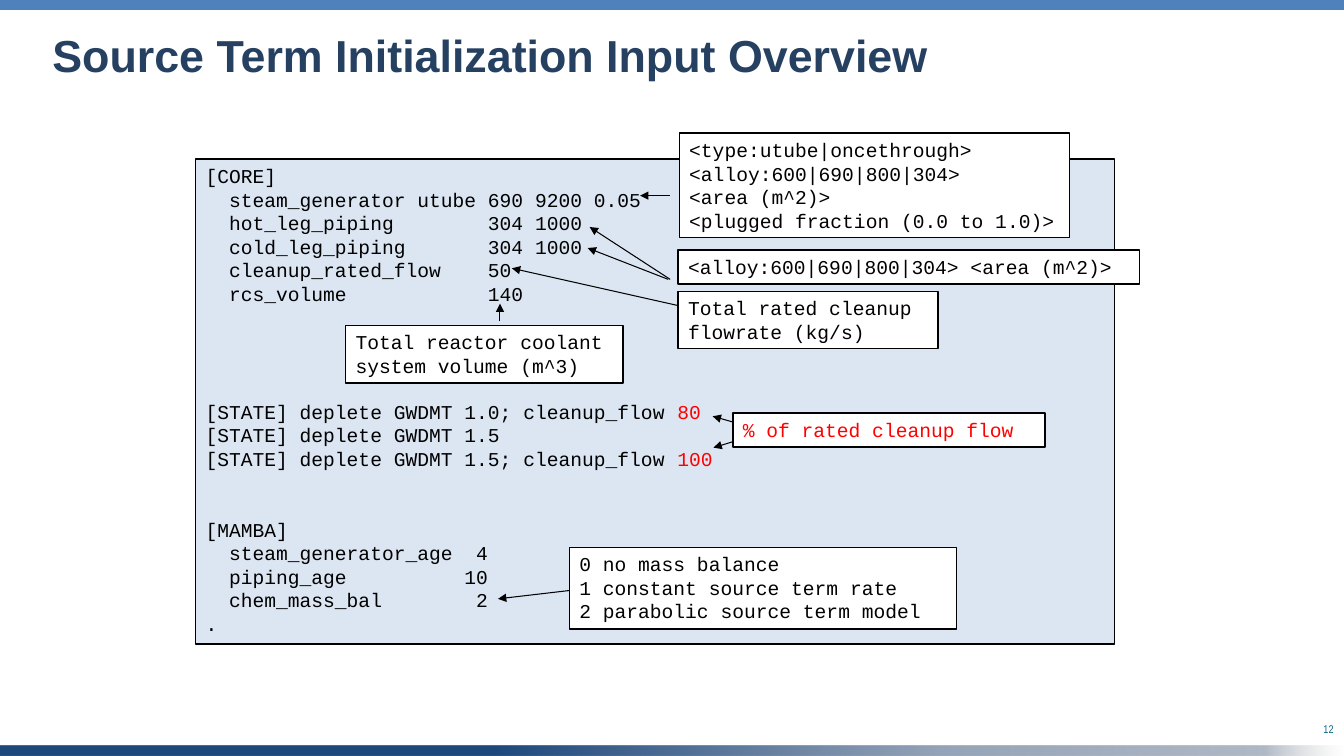
from lxml import etree
from pptx import Presentation
from pptx.dml.color import RGBColor
from pptx.enum.shapes import MSO_CONNECTOR, MSO_SHAPE
from pptx.enum.text import MSO_ANCHOR, PP_ALIGN
from pptx.oxml import parse_xml
from pptx.oxml.ns import nsdecls, qn
from pptx.util import Cm, Pt

RECTANGLE = MSO_SHAPE.RECTANGLE
STRAIGHT = MSO_CONNECTOR.STRAIGHT
TOP = MSO_ANCHOR.TOP
LEFT, RIGHT = PP_ALIGN.LEFT, PP_ALIGN.RIGHT

COLORS = {
    "black": "000000", "white": "FFFFFF", "red": "FF0000",
    "panel": "DCE6F2", "title": "254061", "number": "096582",
    "bar": "4F81BD",
}
FOOTER_STOPS = [(37, "1F497D", 100), (70, "95A4B8", 100),
                (94, "B0B9C6", 100), (100, "DBDBDB", 0)]
SLIDE_WIDTH, SLIDE_HEIGHT, BAR_HEIGHT = 33.87, 19.05, 0.25

INPUT_LINES = [
    ("[CORE]", "", 0),
    ("  steam_generator utube 690 9200 0.05", "", 0),
    ("  hot_leg_piping        304 1000", "", 0),
    ("  cold_leg_piping       304 1000", "", 0),
    ("  cleanup_rated_flow    50", "", 0),
    ("  rcs_volume            140", "", 0),
    ("[STATE] deplete GWDMT 1.0; cleanup_flow ", "80", 67.4),
    ("[STATE] deplete GWDMT 1.5", "", 0),
    ("[STATE] deplete GWDMT 1.5; cleanup_flow ", "100", 0),
    ("[MAMBA]", "", 33.7),
    ("  steam_generator_age  4", "", 0),
    ("  piping_age          10", "", 0),
    ("  chem_mass_bal        2", "", 0),
    (".", "", 0),
]
CALLOUTS = [
    ((17.12, 3.35, 9.83, 2.64), "black",
     ["<type:utube|oncethrough> <alloy:600|690|800|304>",
      "<area (m^2)>", "<plugged fraction (0.0 to 1.0)>"]),
    ((17.09, 6.3, 11.63, 0.86), "black",
     ["<alloy:600|690|800|304> <area (m^2)>"]),
    ((18.47, 10.41, 7.87, 0.86), "red", ["% of rated cleanup flow"]),
    ((17.09, 7.34, 6.55, 1.45), "black",
     ["Total rated cleanup flowrate (kg/s)"]),
    ((14.35, 13.79, 9.75, 2.06), "black",
     ["0 no mass balance", "1 constant source term rate",
      "2 parabolic source term model"]),
    ((8.71, 8.2, 6.99, 1.45), "black",
     ["Total reactor coolant system volume (m^3)"]),
]
ARROWS = [
    (16.89, 4.93, 16.13, 4.93), (16.89, 7.04, 14.86, 5.72),
    (17.09, 7.7, 12.9, 6.76), (18.49, 10.64, 17.96, 10.49),
    (18.47, 11.13, 17.98, 11.28), (16.84, 7.04, 14.81, 6.25),
    (14.35, 14.88, 12.55, 15.09), (12.6, 8.1, 12.6, 7.65),
]


def color(name):
    return RGBColor.from_string(COLORS[name])


def style_font(font, name, size, tint, bold=False):
    font.name, font.size, font.bold = name, Pt(size), bold
    font.color.rgb = color(tint)


def add_rectangle(page, area, fill, outline=None):
    box = page.shapes.add_shape(RECTANGLE, *map(Cm, area))
    box.shadow.inherit = False
    box.fill.solid()
    box.fill.fore_color.rgb = color(fill)
    if outline:
        box.line.color.rgb = color(outline)
        box.line.width = Pt(1)
    else:
        box.line.fill.background()
    return box


def add_footer_bar(page):
    bar = add_rectangle(
        page, (0, SLIDE_HEIGHT - BAR_HEIGHT, SLIDE_WIDTH, BAR_HEIGHT), "bar")
    stops = "".join(
        f'<a:gs pos="{position * 1000}"><a:srgbClr val="{tint}">'
        f'<a:alpha val="{opacity * 1000}"/></a:srgbClr></a:gs>'
        for position, tint, opacity in FOOTER_STOPS)
    gradient = parse_xml(
        f'<a:gradFill {nsdecls("a")} rotWithShape="1"><a:gsLst>{stops}'
        '</a:gsLst><a:lin ang="0" scaled="0"/></a:gradFill>')
    properties = bar.fill._xPr
    properties.replace(properties.find(qn("a:solidFill")), gradient)


def add_code_box(page, area, fill, lines, tint="black"):
    box = add_rectangle(page, area, fill, "black")
    frame = box.text_frame
    frame.word_wrap = True
    frame.vertical_anchor = TOP
    for index, (text, highlight, gap) in enumerate(lines):
        para = frame.add_paragraph() if index else frame.paragraphs[0]
        para.alignment = LEFT
        if gap:
            para.space_before = Pt(gap)
        style_font(para.font, "Courier New", 14, tint)
        para.add_run().text = text
        if highlight:
            span = para.add_run()
            span.text = highlight
            span.font.color.rgb = color("red")


def add_label(page, area, text, font, alignment, spacing=1.0, inset=0.13):
    box = page.shapes.add_textbox(*map(Cm, area))
    frame = box.text_frame
    frame.word_wrap = True
    frame.margin_top = frame.margin_bottom = Cm(inset)
    para = frame.paragraphs[0]
    para.text = text
    para.alignment = alignment
    para.line_spacing = spacing
    style_font(para.font, *font)


def add_arrow(page, ends):
    arrow = page.shapes.add_connector(STRAIGHT, *map(Cm, ends))
    arrow.line.color.rgb = color("black")
    arrow.line.width = Pt(0.75)
    etree.SubElement(arrow.line._get_or_add_ln(), qn("a:tailEnd"),
                     type="triangle")
    etree.SubElement(arrow._element.spPr, qn("a:effectLst"))


def main():
    deck = Presentation()
    deck.slide_width, deck.slide_height = Cm(SLIDE_WIDTH), Cm(SLIDE_HEIGHT)
    page = deck.slides.add_slide(deck.slide_layouts[6])
    add_label(page, (25.76, 18.08, 8.1, 0.61), "12",
              ("Arial Narrow", 8, "number"), RIGHT)
    add_rectangle(page, (0, 0, SLIDE_WIDTH, BAR_HEIGHT), "bar")
    add_footer_bar(page)
    add_label(page, (1.07, 0.76, 30.89, 2.39),
              "Source Term Initialization Input Overview",
              ("Arial", 32, "title", True), LEFT, 0.85, 0.15)
    add_code_box(page, (4.93, 4.01, 23.16, 12.22), "panel", INPUT_LINES)
    for area, tint, texts in CALLOUTS:
        add_code_box(page, area, "white",
                     [(text, "", 0) for text in texts], tint)
    for ends in ARROWS:
        add_arrow(page, ends)
    deck.save("out.pptx")


if __name__ == "__main__":
    main()
